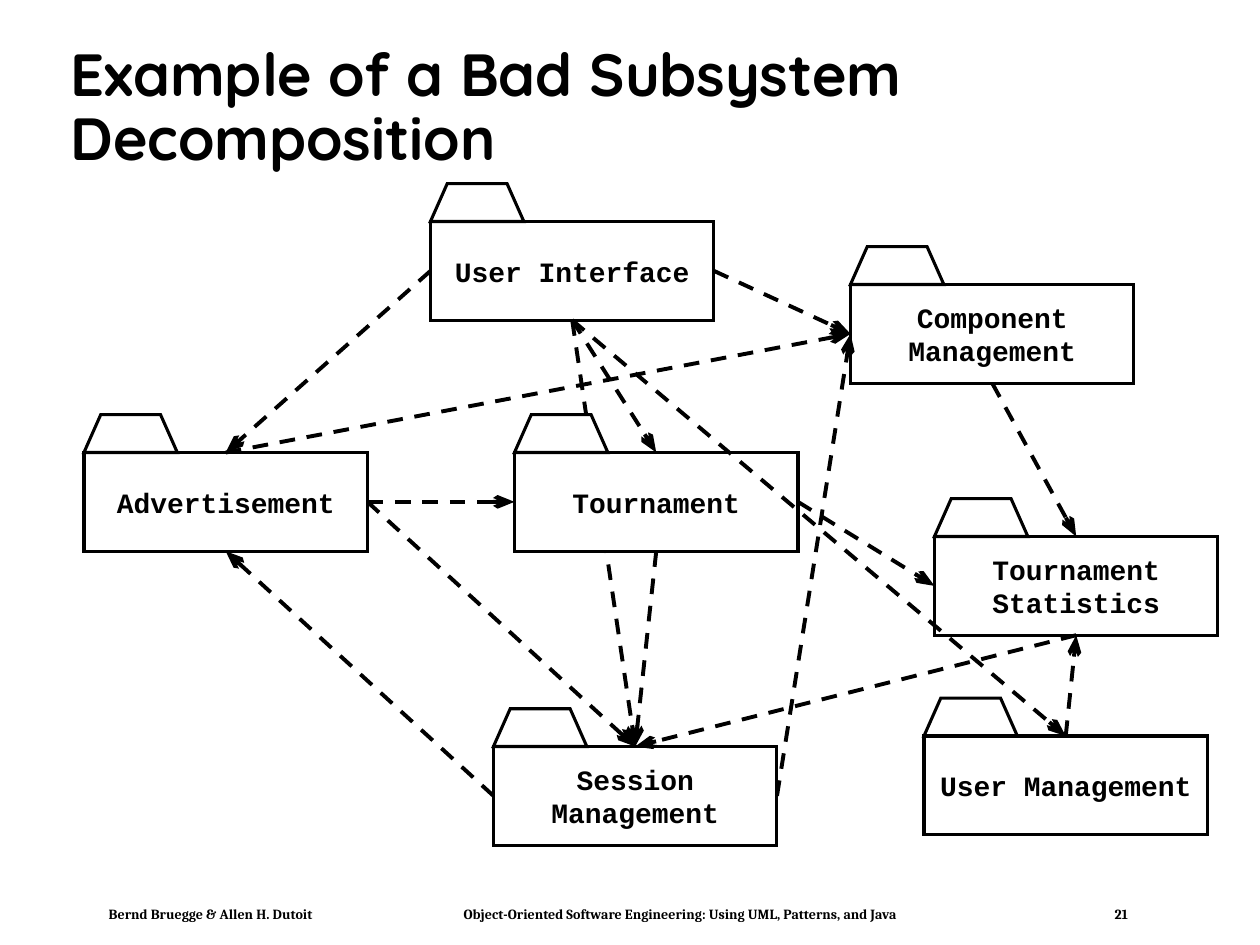
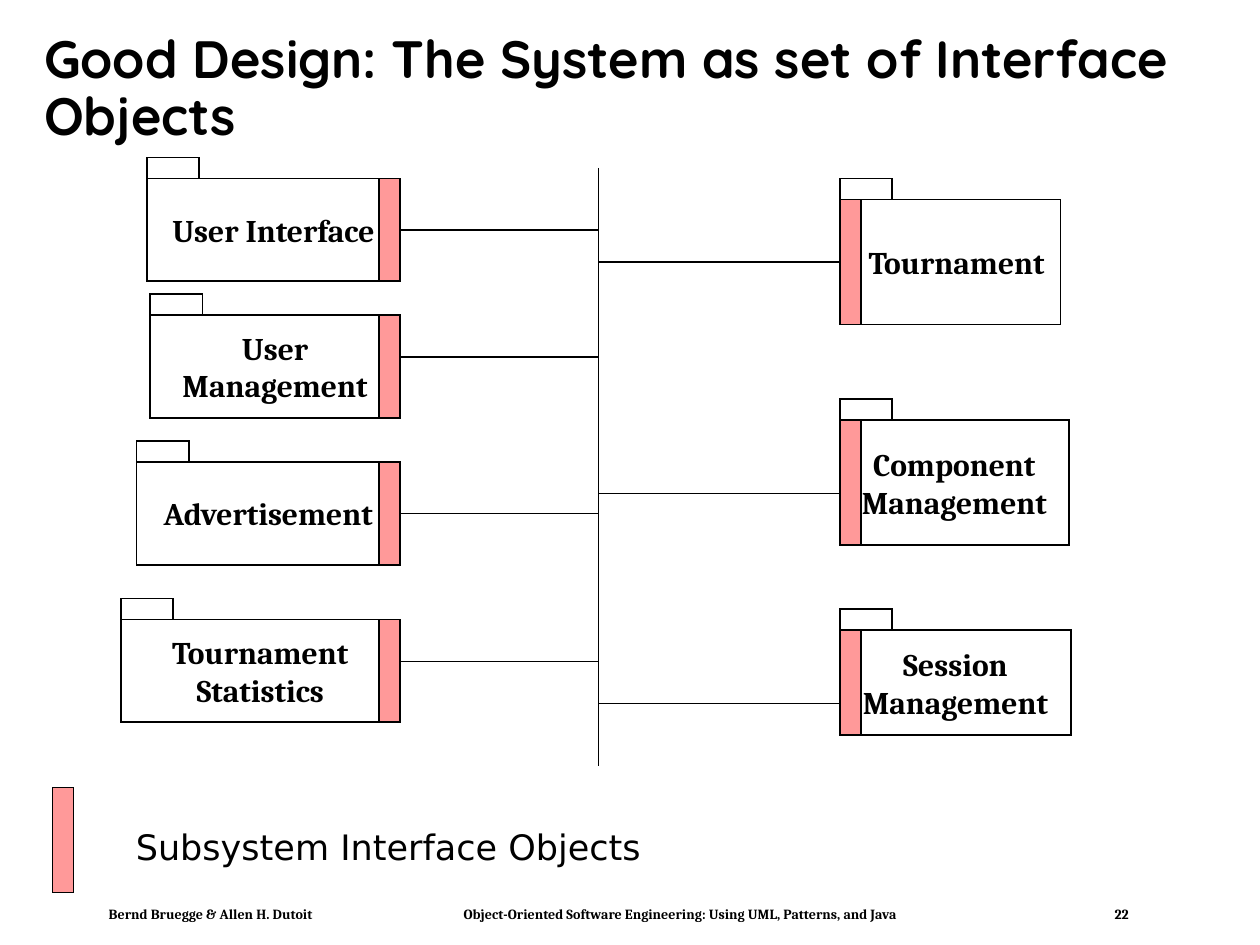
from lxml import etree
from pptx import Presentation
from pptx import util as u
from pptx.dml.color import RGBColor
from pptx.enum import dml, shapes, text
from pptx.oxml.ns import qn

BLACK = RGBColor(0x00, 0x00, 0x00)
WHITE = RGBColor(0xFF, 0xFF, 0xFF)
PINK = RGBColor(0xFF, 0x99, 0x99)

TITLE_FONT, SERIF, MONO, SANS = "Quicksand", "Cambria", "Courier New", "DejaVu Sans"
GRID = u.Inches(1) // 12  # one column or row: 120 columns by 90 rows
TITLE_ONLY = 5
TOP, LEFT, BOTTOM, RIGHT = range(4)

PACKAGE_WIDTH, PACKAGE_HEIGHT = 27, 9.4
TAB_WIDTH, TAB_HEIGHT, TAB_SLOPE = 8.9, 3.6, 1.6
PACKAGES = {  # column and row of the tab's top left corner
    "Advertisement": (8, 39.5),
    "User Interface": (41, 17.5),
    "Session Management": (47, 67.5),
    "User Management": (88, 66.5),
    "Tournament Statistics": (89, 47.5),
    "Component Management": (81, 23.5),
    "Tournament": (49, 39.5),
}
LINK_BEHIND_TOURNAMENT = ("User Interface", BOTTOM, "Session Management", TOP)
LINKS = [
    ("User Interface", RIGHT, "Component Management", LEFT),
    ("User Interface", BOTTOM, "Tournament", TOP),
    ("User Interface", LEFT, "Advertisement", TOP),
    ("User Interface", BOTTOM, "User Management", TOP),
    ("Tournament", RIGHT, "Tournament Statistics", LEFT),
    ("Tournament", BOTTOM, "Session Management", TOP),
    ("Advertisement", RIGHT, "Tournament", LEFT),
    ("Advertisement", RIGHT, "Session Management", TOP),
    ("Advertisement", TOP, "Component Management", LEFT),
    ("Component Management", BOTTOM, "Tournament Statistics", TOP),
    ("User Management", TOP, "Tournament Statistics", BOTTOM),
    ("Tournament Statistics", BOTTOM, "Session Management", TOP),
    ("Session Management", RIGHT, "Component Management", LEFT),
    ("Session Management", LEFT, "Advertisement", BOTTOM),
]

BUS_COLUMN = 57
BAR_WIDTH = 2
LEFT_EDGE, RIGHT_EDGE = 80, 38.1  # where the two sides' interface bars face the bus
# label, left column, top row, link row (None: the middle of the box)
LEFT_SUBSYSTEMS = [
    ("User Interface", 14, 17, None),
    ("User\nManagement", 14.3, 30, 34),
    ("Advertisement", 13, 44, None),
    ("Tournament\nStatistics", 11.5, 59, 63),
]
# label, top row, width, height, link row, left inset
RIGHT_SUBSYSTEMS = [
    ("Tournament", 19, 21, 11.9, None, 0.2),
    ("Component\nManagement", 40, 21.8, 11.9, 47, 0.1),
    ("Session\nManagement", 60, 22, 10, 67, 0.1),
]


def grid(*units):
    return [round(unit * GRID) for unit in units]


def write(shape, content, font, size, bold=True, align=text.PP_ALIGN.CENTER,
          wrap=True, spacing=None, inset=0.1, right_inset=0.1):
    frame = shape.text_frame
    frame.text = content
    frame.word_wrap = wrap
    frame.auto_size = text.MSO_AUTO_SIZE.NONE
    frame.vertical_anchor = text.MSO_ANCHOR.MIDDLE
    frame.margin_left, frame.margin_right = u.Inches(inset), u.Inches(right_inset)
    for paragraph in frame.paragraphs:
        paragraph.alignment = align
        if spacing:
            paragraph.line_spacing = spacing
        for run in paragraph.runs:
            run.font.name, run.font.size, run.font.bold = font, u.Pt(size), bold
            run.font.color.rgb = BLACK


def paint(shape, fill, line_width):
    shape.shadow.inherit = False
    if fill is None:
        shape.fill.background()
    else:
        shape.fill.solid()
        shape.fill.fore_color.rgb = fill
    shape.line.color.rgb = BLACK
    shape.line.width = u.Pt(line_width)
    etree.SubElement(shape.element.spPr.find(qn("a:ln")), qn("a:miter"), lim="800000")


def add_box(container, box, fill=WHITE, line_width=1):
    shape = container.add_shape(shapes.MSO_SHAPE.RECTANGLE, *grid(*box))
    paint(shape, fill, line_width)
    return shape


def add_line(slide, start=(0, 0), end=(0, 0), width=1):
    line = slide.shapes.add_connector(shapes.MSO_CONNECTOR.STRAIGHT, *grid(*start, *end))
    line.line.color.rgb = BLACK
    line.line.width = u.Pt(width)
    etree.SubElement(line.element.spPr, qn("a:effectLst"))
    return line


def add_footer(slide, number):
    """Set author, book and slide number on one line with tab stops."""
    footer = slide.shapes.add_textbox(*grid(9.4, 85.6, 102, 2.9))
    write(footer, "Bernd Bruegge & Allen H. Dutoit\t"
          "Object-Oriented Software Engineering: Using UML, Patterns, and Java\t"
          f"{number}", SERIF, 8, align=text.PP_ALIGN.LEFT, inset=0.08, right_inset=0)
    properties = footer.text_frame.paragraphs[0]._p.get_or_add_pPr()
    tabs = etree.SubElement(properties, qn("a:tabLst"))
    for position in grid(33.8, 95.8):
        etree.SubElement(tabs, qn("a:tab"), pos=str(position), algn="l")


def add_titled_slide(presentation, title, size, box, number):
    slide = presentation.slides.add_slide(presentation.slide_layouts[TITLE_ONLY])
    shape = slide.shapes.title
    shape.left, shape.top, shape.width, shape.height = grid(*box)
    write(shape, title, TITLE_FONT, size, align=text.PP_ALIGN.LEFT, spacing=0.9)
    add_footer(slide, number)
    return slide


def add_package(slide, label, column, row, fill=None):
    """Draw a box with a slanted tab and return the box."""
    group = slide.shapes.add_group_shape().shapes
    base = row + TAB_HEIGHT
    box = add_box(group, (column, base, PACKAGE_WIDTH, PACKAGE_HEIGHT), fill, 1.75)
    write(box, label, MONO, 16)
    outline = group.build_freeform(*grid(column, base))
    outline.add_line_segments([
        grid(column + TAB_SLOPE, row),
        grid(column + TAB_WIDTH - TAB_SLOPE, row),
        grid(column + TAB_WIDTH, base),
    ], close=True)
    paint(outline.convert_to_shape(), fill, 1.75)
    return box


def add_dependency(slide, boxes, source, source_side, target, target_side):
    arrow = add_line(slide, width=2.25)
    arrow.begin_connect(boxes[source], source_side)
    arrow.end_connect(boxes[target], target_side)
    arrow.line.dash_style = dml.MSO_LINE.DASH
    etree.SubElement(arrow.element.spPr.find(qn("a:ln")), qn("a:tailEnd"),
                     type="arrow", w="med", len="lg")


def build_bad_decomposition(presentation):
    slide = add_titled_slide(presentation, "Example of a Bad Subsystem Decomposition",
                             34, (5.5, 5.8, 110.5, 9.2), 21)
    boxes = {label: add_package(slide, label, *place)
             for label, place in PACKAGES.items() if label != "Tournament"}
    add_dependency(slide, boxes, *LINK_BEHIND_TOURNAMENT)
    boxes["Tournament"] = add_package(slide, "Tournament", *PACKAGES["Tournament"], fill=WHITE)
    for link in LINKS:
        add_dependency(slide, boxes, *link)


def add_subsystem(slide, label, box, bar_side, link_row, inset=0.1):
    """Draw a tabbed box whose interface bar is linked to the bus."""
    left, top, width, height = box
    write(add_box(slide.shapes, box), label, SERIF, 18, wrap=False, inset=inset)
    add_box(slide.shapes, (left, top - 2, 5, 2))
    bar_left = left if bar_side == LEFT else left + width - BAR_WIDTH
    bar = add_box(slide.shapes, (bar_left, top, BAR_WIDTH, height), PINK)
    row = link_row or top + height / 2
    edge = left if bar_side == LEFT else left + width
    link = add_line(slide, (edge, row), (BUS_COLUMN, row))
    if link_row is None:
        link.begin_connect(bar, bar_side)


def add_legend(slide, column, row):
    add_box(slide.shapes, (column, row, BAR_WIDTH, 10), PINK)
    label = slide.shapes.add_textbox(*grid(column + 6.5, row + 3, 51, 5.2))
    write(label, "Subsystem Interface Objects", SANS, 20, bold=False, wrap=False)


def build_good_design(presentation):
    slide = add_titled_slide(presentation, "Good Design: The System as set of Interface Objects",
                             30, (3, 2.9, 113.2, 11.3), 22)
    add_line(slide, (BUS_COLUMN, 16), (BUS_COLUMN, 73))
    for label, left, top, link_row in LEFT_SUBSYSTEMS:
        add_subsystem(slide, label, (left, top, RIGHT_EDGE - left, 9.8), RIGHT, link_row)
    for label, top, width, height, link_row, inset in RIGHT_SUBSYSTEMS:
        add_subsystem(slide, label, (LEFT_EDGE, top, width, height), LEFT, link_row, inset)
    add_legend(slide, 5, 75)


def main():
    presentation = Presentation()
    presentation.slide_width, presentation.slide_height = grid(120, 90)
    build_bad_decomposition(presentation)
    build_good_design(presentation)
    presentation.save("out.pptx")


if __name__ == "__main__":
    main()
